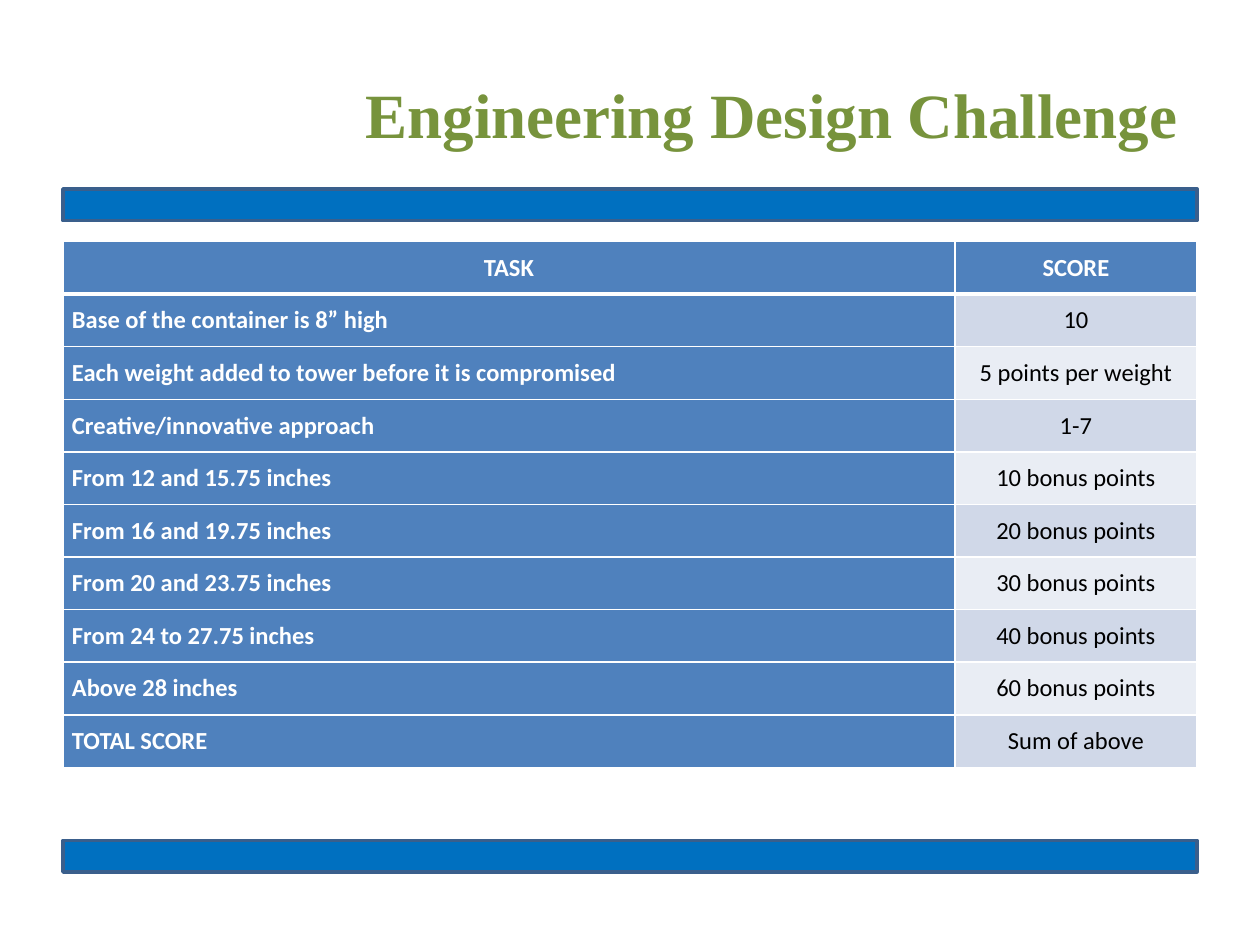
from lxml.etree import SubElement
from pptx import Presentation
from pptx.dml.color import RGBColor
from pptx.enum.shapes import MSO_SHAPE
from pptx.enum.text import MSO_ANCHOR, PP_ALIGN
from pptx.oxml.ns import qn
from pptx.util import Cm, Pt

COLORS = {
    "title": "77933C",
    "bar": "0070C0",
    "bar_line": "3A5F8C",
    "header": "4F81BD",
    "band_dark": "D0D8E8",
    "band_light": "E9EDF4",
    "white": "FFFFFF",
    "black": "000000",
}

SCORES = [
    ("TASK", "SCORE"),
    ("Base of the container is 8” high", "10"),
    ("Each weight added to tower before it is compromised", "5 points per weight"),
    ("Creative/innovative approach", "1-7"),
    ("From 12 and 15.75 inches", "10 bonus points"),
    ("From 16 and 19.75 inches", "20 bonus points"),
    ("From 20 and 23.75 inches", "30 bonus points"),
    ("From 24 to 27.75 inches", "40 bonus points"),
    ("Above 28 inches", "60 bonus points"),
    ("TOTAL SCORE", "Sum of above"),
]


def color(name):
    return RGBColor.from_string(COLORS[name])


def write(frame, text, font="Calibri", size=14, ink="black", bold=False, align=PP_ALIGN.CENTER):
    para = frame.paragraphs[0]
    para.alignment = align
    span = para.add_run()
    span.text = text
    span.font.name = font
    span.font.size = Pt(size)
    span.font.bold = bold
    span.font.color.rgb = color(ink)


class SlideBuilder:
    left = Cm(1.27)
    width = Cm(22.86)

    def __init__(self, page):
        self.page = page

    def bar(self, top):
        box = self.page.shapes.add_shape(
            MSO_SHAPE.RECTANGLE, self.left, Cm(top), self.width, Cm(0.64))
        box.shadow.inherit = False
        box.fill.solid()
        box.fill.fore_color.rgb = color("bar")
        box.line.color.rgb = color("bar_line")
        box.line.width = Pt(2)

    def title(self, text):
        box = self.page.shapes.add_textbox(Cm(6.99), Cm(0.76), Cm(17.14), Cm(3.05))
        frame = box.text_frame
        frame.word_wrap = True
        frame.vertical_anchor = MSO_ANCHOR.MIDDLE
        write(frame, text, font="Times New Roman", size=36, ink="title", bold=True)

    def borders(self, cell, **widths):
        properties = cell._tc.get_or_add_tcPr()
        for side in "LRTB":
            line = SubElement(properties, qn(f"a:ln{side}"), w=str(Pt(widths.get(side, 1))))
            fill = SubElement(line, qn("a:solidFill"))
            SubElement(fill, qn("a:srgbClr"), val=COLORS["white"])

    def cell(self, cell, text, row, column):
        header = row == 0
        strong = header or column == 0
        cell.margin_left = cell.margin_right = Cm(0.18)
        cell.margin_top = cell.margin_bottom = 0
        cell.vertical_anchor = MSO_ANCHOR.MIDDLE
        self.borders(cell, B=3 if header else 1, T=3 if row == 1 else 1)
        band = "band_dark" if row % 2 else "band_light"
        cell.fill.solid()
        cell.fill.fore_color.rgb = color("header" if strong else band)
        write(cell.text_frame, text, bold=strong,
              ink="white" if strong else "black",
              align=PP_ALIGN.CENTER if header or column else PP_ALIGN.LEFT)

    def table(self, rows, top, widths, row_height):
        table = self.page.shapes.add_table(
            len(rows), len(widths), self.left, Cm(top),
            self.width, Cm(row_height * len(rows))).table
        table.first_col = True
        for column, width in zip(table.columns, widths):
            column.width = Cm(width)
        for row, texts in enumerate(rows):
            table.rows[row].height = Cm(row_height)
            for column, text in enumerate(texts):
                self.cell(table.cell(row, column), text, row, column)


def main():
    deck = Presentation()
    deck.slide_width, deck.slide_height = Cm(25.4), Cm(19.05)
    builder = SlideBuilder(deck.slides.add_slide(deck.slide_layouts[6]))
    for top in (3.81, 16.94):
        builder.bar(top)
    builder.title("Engineering Design Challenge")
    builder.table(SCORES, top=4.87, widths=(17.98, 4.88), row_height=1.06)
    deck.save("out.pptx")


if __name__ == "__main__":
    main()
